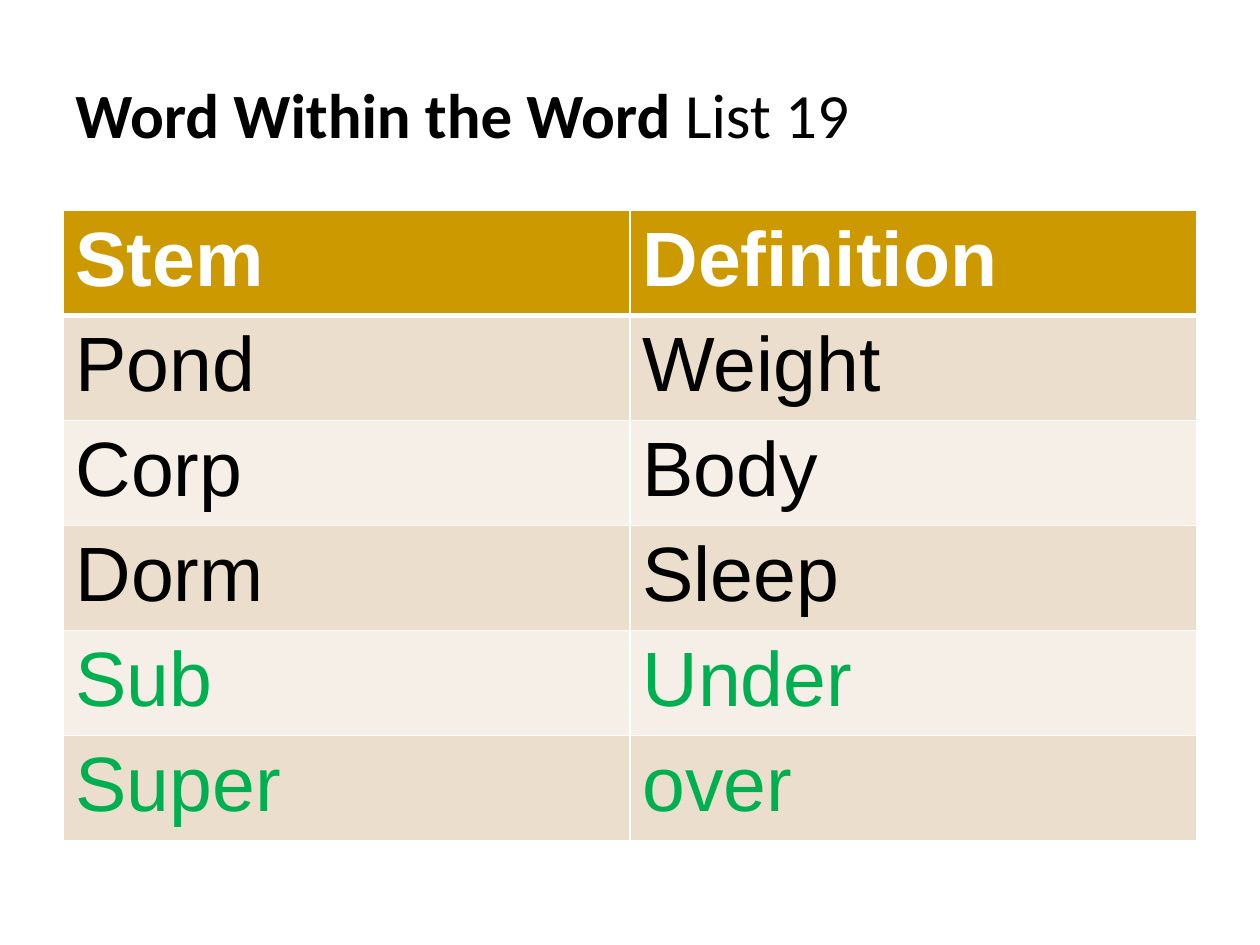
from dataclasses import dataclass

from lxml import etree
from pptx import Presentation
from pptx.dml.color import RGBColor
from pptx.enum.text import MSO_ANCHOR
from pptx.oxml.ns import qn
from pptx.util import Inches, Pt

BOTTOM = MSO_ANCHOR.BOTTOM
BLANK_LAYOUT = 6


@dataclass(frozen=True)
class Theme:
    title_font: str = "Calibri"
    table_font: str = "Arial"
    title_size: int = 36
    table_size: int = 44
    text: str = "000000"
    accent: str = "00B050"
    header_text: str = "FFFFFF"
    header_fill: str = "CC9900"
    bands: tuple = ("ECDECC", "F6EFE7")
    border: str = "FFFFFF"
    thin: int = 1
    thick: int = 3


class SlideBuilder:
    def __init__(self, slide, theme):
        self.slide = slide
        self.theme = theme

    def style(self, run, font, size, color, bold):
        run.font.name = font
        run.font.size = Pt(size)
        run.font.color.rgb = RGBColor.from_string(color)
        run.font.bold = bold

    def title(self, parts, left, top, width, height):
        box = self.slide.shapes.add_textbox(
            Inches(left), Inches(top), Inches(width), Inches(height))
        frame = box.text_frame
        frame.word_wrap = True
        frame.vertical_anchor = BOTTOM
        for text, bold in parts:
            run = frame.paragraphs[0].add_run()
            run.text = text
            self.style(run, self.theme.title_font, self.theme.title_size,
                       self.theme.text, bold)

    def borders(self, cell, bottom):
        properties = cell._tc.get_or_add_tcPr()
        thin = self.theme.thin
        for side, width in (("L", thin), ("R", thin), ("T", thin), ("B", bottom)):
            line = etree.SubElement(properties, qn(f"a:ln{side}"), w=str(Pt(width)))
            fill = etree.SubElement(line, qn("a:solidFill"))
            etree.SubElement(fill, qn("a:srgbClr"), val=self.theme.border)

    def cell(self, cell, text, color, fill, bold=False, bottom=None):
        cell.text_frame.text = text
        self.style(cell.text_frame.paragraphs[0].runs[0], self.theme.table_font,
                   self.theme.table_size, color, bold)
        self.borders(cell, bottom or self.theme.thin)
        cell.fill.solid()
        cell.fill.fore_color.rgb = RGBColor.from_string(fill)

    def table(self, header, entries, left, top, width, row_height):
        theme = self.theme
        row_count = len(entries) + 1
        table = self.slide.shapes.add_table(
            row_count, len(header), Inches(left), Inches(top),
            Inches(width), Inches(row_height * row_count)).table
        table.horz_banding = False
        # Header row
        for column, heading in enumerate(header):
            self.cell(table.cell(0, column), heading, theme.header_text,
                      theme.header_fill, bold=True, bottom=theme.thick)
        # Banded stem rows
        for index, (stem, definition, color) in enumerate(entries):
            band = theme.bands[index % len(theme.bands)]
            for column, text in enumerate((stem, definition)):
                self.cell(table.cell(index + 1, column), text, color, band)


def main():
    presentation = Presentation()
    presentation.slide_width = Inches(10)
    presentation.slide_height = Inches(7.5)
    slide = presentation.slides.add_slide(presentation.slide_layouts[BLANK_LAYOUT])
    theme = Theme()
    builder = SlideBuilder(slide, theme)

    # Title
    builder.title([("Word Within the Word ", True), ("List 19", False)],
                  0.5, 0.08, 7.42, 1.17)

    # Stems and definitions
    stems = [
        ("Pond", "Weight", theme.text),
        ("Corp", "Body", theme.text),
        ("Dorm", "Sleep", theme.text),
        ("Sub", "Under", theme.accent),
        ("Super", "over", theme.accent),
    ]
    builder.table(("Stem", "Definition"), stems, 0.5, 1.67, 9, 0.71)

    presentation.save("out.pptx")


if __name__ == "__main__":
    main()
